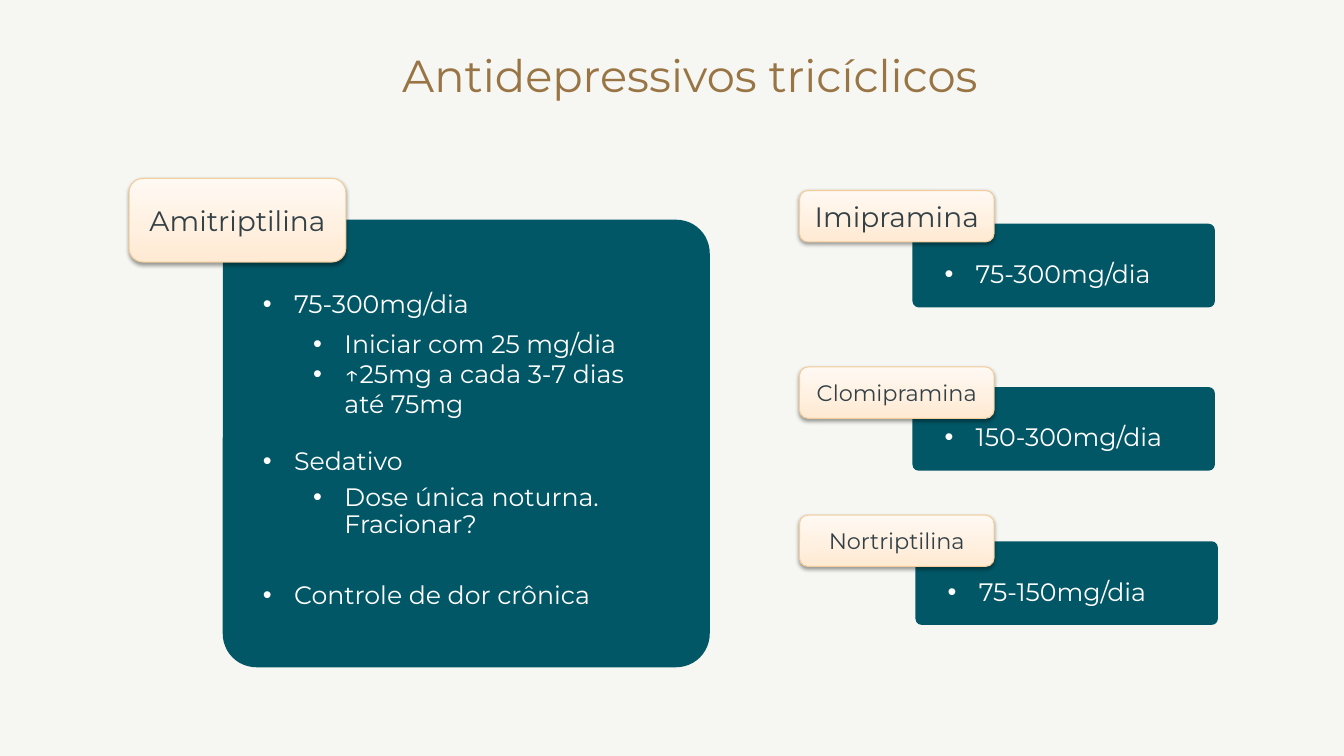
from dataclasses import dataclass

from lxml import etree
from pptx import Presentation
from pptx.dml.color import RGBColor
from pptx.enum.shapes import MSO_SHAPE
from pptx.enum.text import MSO_ANCHOR, PP_ALIGN
from pptx.oxml import parse_xml
from pptx.oxml.ns import nsdecls, qn
from pptx.util import Inches, Pt

ROUNDED = MSO_SHAPE.ROUNDED_RECTANGLE
TOP, MIDDLE = MSO_ANCHOR.TOP, MSO_ANCHOR.MIDDLE
LEFT, CENTER = PP_ALIGN.LEFT, PP_ALIGN.CENTER

FONT = "Montserrat"
BACKGROUND, GOLD, TEAL, WHITE = "F6F7F2", "997545", "025766", "FFFFFF"
SLATE, PEACH, CREAM, PEACH_LINE = "334147", "FFEAD3", "FFF9F3", "F3CE9C"


@dataclass
class Box:
    left: float
    top: float
    width: float
    height: float


@dataclass
class Bullet:
    text: str
    level: int = 0
    before: float = 0
    spacing: float = 0.9


@dataclass
class Drug:
    name: str
    name_size: int
    tag: Box
    card: Box
    inset_top: float
    bullets: list[Bullet]


def small_drug(name: str, name_size: int, tag_top: float,
               card_left: float, card_top: float, dose: str) -> Drug:
    return Drug(name, name_size, Box(7.93, tag_top, 1.93, 0.51),
                Box(card_left, card_top, 3, 0.83), 0.36, [Bullet(dose)])


DRUGS = [
    Drug("Amitriptilina", 20, Box(1.28, 1.77, 2.15, 0.83),
         Box(2.21, 2.18, 4.83, 4.44), 0.62, [
             Bullet("75-300mg/dia"),
             Bullet("Iniciar com 25 mg/dia", 1, 6.5, 1.0),
             Bullet("↑25mg a cada 3-7 dias até 75mg", 1, 0, 1.0),
             Bullet("Sedativo", 0, 21.5),
             Bullet("Dose única noturna. Fracionar?", 1, 6),
             Bullet("Controle de dor crônica", 0, 31),
         ]),
    small_drug("Imipramina", 20, 1.89, 9.05, 2.22, "75-300mg/dia"),
    small_drug("Clomipramina", 16, 3.64, 9.05, 3.84, "150-300mg/dia"),
    small_drug("Nortriptilina", 16, 5.11, 9.08, 5.37, "75-150mg/dia"),
]


def rgb(value: str) -> RGBColor:
    return RGBColor.from_string(value)


def place(box: Box) -> tuple:
    return (Inches(box.left), Inches(box.top),
            Inches(box.width), Inches(box.height))


def format_runs(p, size: float, color: str) -> None:
    for r in p.runs:
        r.font.name = FONT
        r.font.size = Pt(size)
        r.font.color.rgb = rgb(color)


def set_margins(tf, left: float, top: float, right: float, bottom: float) -> None:
    tf.margin_left, tf.margin_top = Inches(left), Inches(top)
    tf.margin_right, tf.margin_bottom = Inches(right), Inches(bottom)


def add_title(slide, text: str) -> None:
    sp = slide.shapes.title
    sp.left, sp.top, sp.width, sp.height = place(Box(1.46, 0.35, 10.77, 0.85))
    tf = sp.text_frame
    tf.text = text
    tf.vertical_anchor = MIDDLE
    set_margins(tf, 0, 0, 0, 0)
    p = tf.paragraphs[0]
    p.alignment = CENTER
    p.line_spacing = 0.9
    format_runs(p, 32, GOLD)


def set_bullet(p, level: int) -> None:
    pPr = p._p.get_or_add_pPr()
    pPr.set("marL", str(Inches(0.31 + 0.5 * level)))
    pPr.set("indent", str(-Inches(0.31)))
    etree.SubElement(pPr, qn("a:buFont")).set("typeface", "Arial")
    etree.SubElement(pPr, qn("a:buChar")).set("char", "•")


def add_card(slide, drug: Drug) -> None:
    sp = slide.shapes.add_shape(ROUNDED, *place(drug.card))
    sp.adjustments[0] = 0.075
    sp.shadow.inherit = False
    sp.fill.solid()
    sp.fill.fore_color.rgb = rgb(TEAL)
    sp.line.fill.background()
    tf = sp.text_frame
    tf.word_wrap = True
    tf.vertical_anchor = TOP
    set_margins(tf, 0.3, drug.inset_top, 0.3, 0.1)
    tf.text = "\n".join(bullet.text for bullet in drug.bullets)
    for p, bullet in zip(tf.paragraphs, drug.bullets):
        set_bullet(p, bullet.level)
        p.level = bullet.level
        p.alignment = LEFT
        p.line_spacing = bullet.spacing
        p.space_before = Pt(bullet.before)
        format_runs(p, 18, WHITE)


def add_soft_shadow(sp) -> None:
    sp.shadow.inherit = False
    effects = sp._element.spPr.find(qn("a:effectLst"))
    effects.append(parse_xml(
        f'<a:outerShdw {nsdecls("a")} blurRad="{Pt(3.1)}" dist="{Pt(1.6)}" '
        'dir="5400000" rotWithShape="0"><a:srgbClr val="000000">'
        '<a:alpha val="38000"/></a:srgbClr></a:outerShdw>'))


def add_tag(slide, drug: Drug) -> None:
    sp = slide.shapes.add_shape(ROUNDED, *place(drug.tag))
    sp.fill.gradient()
    sp.fill.gradient_angle = 90
    for stop, color in zip(sp.fill.gradient_stops, (PEACH, CREAM)):
        stop.color.rgb = rgb(color)
    sp.line.color.rgb = rgb(PEACH_LINE)
    sp.line.width = Pt(0.75)
    add_soft_shadow(sp)
    tf = sp.text_frame
    tf.word_wrap = True
    tf.vertical_anchor = MIDDLE
    tf.text = drug.name
    p = tf.paragraphs[0]
    p.alignment = CENTER
    format_runs(p, drug.name_size, SLATE)


def main() -> None:
    prs = Presentation()
    prs.slide_width, prs.slide_height = Inches(13.33), Inches(7.5)
    slide = prs.slides.add_slide(prs.slide_layouts.get_by_name("Title Only"))
    slide.background.fill.solid()
    slide.background.fill.fore_color.rgb = rgb(BACKGROUND)
    add_title(slide, "Antidepressivos tricíclicos")
    for drug in DRUGS:
        add_card(slide, drug)
        add_tag(slide, drug)
    prs.save("out.pptx")


if __name__ == "__main__":
    main()
